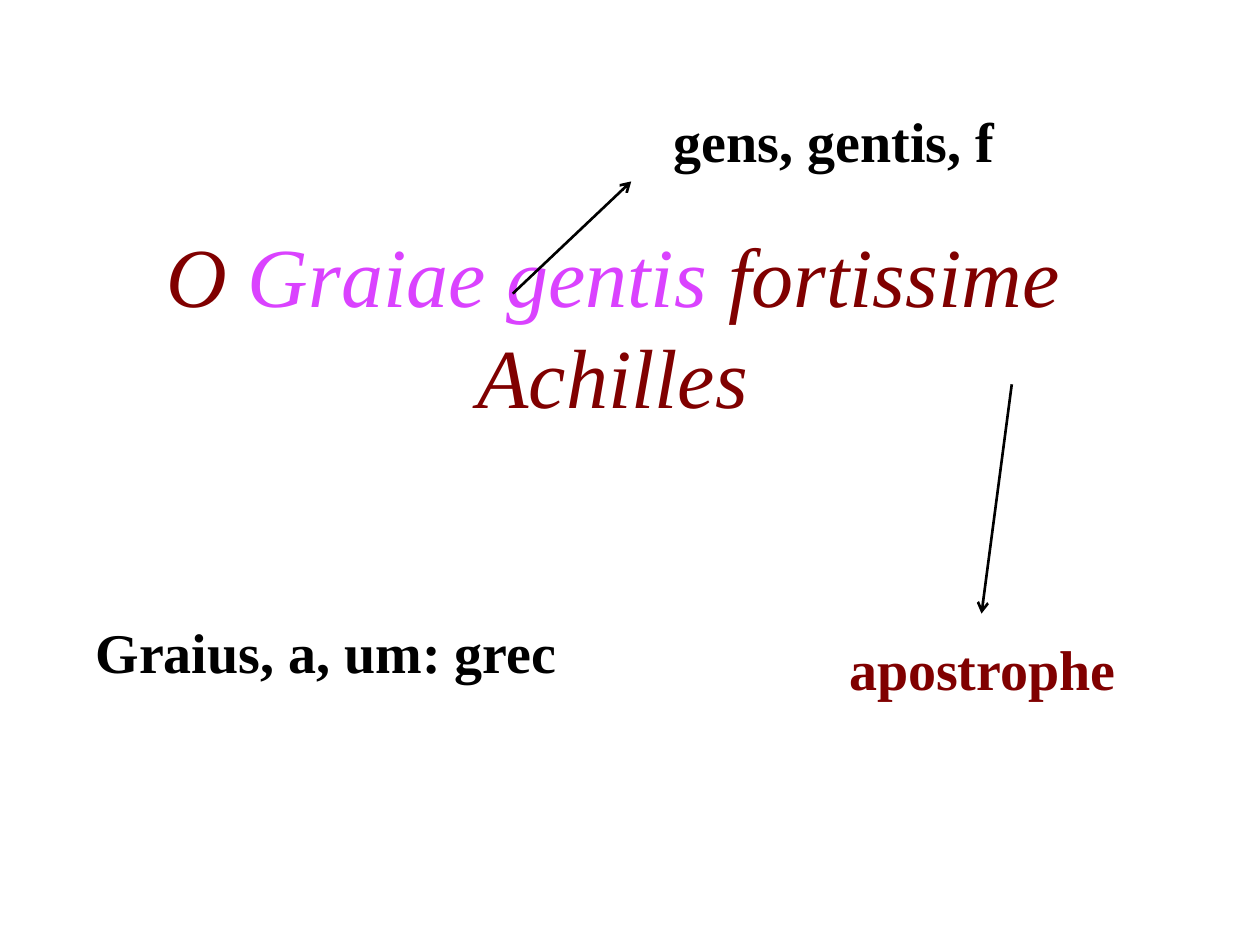
"""Build a slide that annotates a Latin verse with arrows and glosses."""
from lxml import etree
from pptx import Presentation
from pptx.dml.color import RGBColor
from pptx.enum.shapes import MSO_CONNECTOR
from pptx.enum.text import MSO_ANCHOR, MSO_AUTO_SIZE, PP_ALIGN
from pptx.oxml.ns import qn
from pptx.util import Inches, Pt

LINE = MSO_CONNECTOR.STRAIGHT
MIDDLE = MSO_ANCHOR.MIDDLE
CENTER = PP_ALIGN.CENTER
GROW = MSO_AUTO_SIZE.SHAPE_TO_FIT_TEXT
FONT = "Times New Roman"
COLORS = {"red": "800000", "pink": "DA42FF", "black": "000000", "white": "FFFFFF"}

VERSE = [("O ", "red"), ("Graiae gentis ", "pink"), ("fortissime Achilles", "red")]
VERSE_AT = (0.45, 2.1, 8.83, 0.95)
ARROWS = [(8.03, 3.05, 7.79, 4.87), (4.07, 2.33, 5.01, 1.44)]
GLOSSES = [
    ("apostrophe", "red", None, (6.64, 4.99, 2.47, 0.64)),
    ("Graius, a, um: grec", "black", "white", (0.66, 4.85, 3.96, 0.64)),
    ("gens, gentis, f", "black", "white", (5.25, 0.8, 2.78, 0.64)),
]


def rgb(name):
    return RGBColor.from_string(COLORS[name])


def add_text(slide, at, runs, size, bold=False, italic=False):
    box = slide.shapes.add_textbox(*map(Inches, at))
    box.text_frame.word_wrap = True
    para = box.text_frame.paragraphs[0]
    for text, color in runs:
        run = para.add_run()
        run.text = text
        font = run.font
        font.name, font.size = FONT, Pt(size)
        font.bold, font.italic = bold, italic
        font.color.rgb = rgb(color)
    return box


def add_arrow(slide, ends):
    arrow = slide.shapes.add_connector(LINE, *map(Inches, ends))
    arrow.line.color.rgb = rgb("black")
    arrow.line.width = Pt(1.5)
    etree.SubElement(arrow.line._get_or_add_ln(), qn("a:tailEnd"), type="arrow")
    etree.SubElement(arrow._element.spPr, qn("a:effectLst"))


def main():
    deck = Presentation()
    deck.slide_width, deck.slide_height = Inches(10), Inches(7.5)
    slide = deck.slides.add_slide(deck.slide_layouts[6])

    verse = add_text(slide, VERSE_AT, VERSE, 48, italic=True)
    verse.text_frame.vertical_anchor = MIDDLE
    verse.text_frame.paragraphs[0].alignment = CENTER

    for ends in ARROWS:
        add_arrow(slide, ends)

    for text, color, fill, at in GLOSSES:
        box = add_text(slide, at, [(text, color)], 32, bold=True)
        box.text_frame.auto_size = GROW
        if fill:
            box.fill.solid()
            box.fill.fore_color.rgb = rgb(fill)

    deck.save("out.pptx")


if __name__ == "__main__":
    main()
